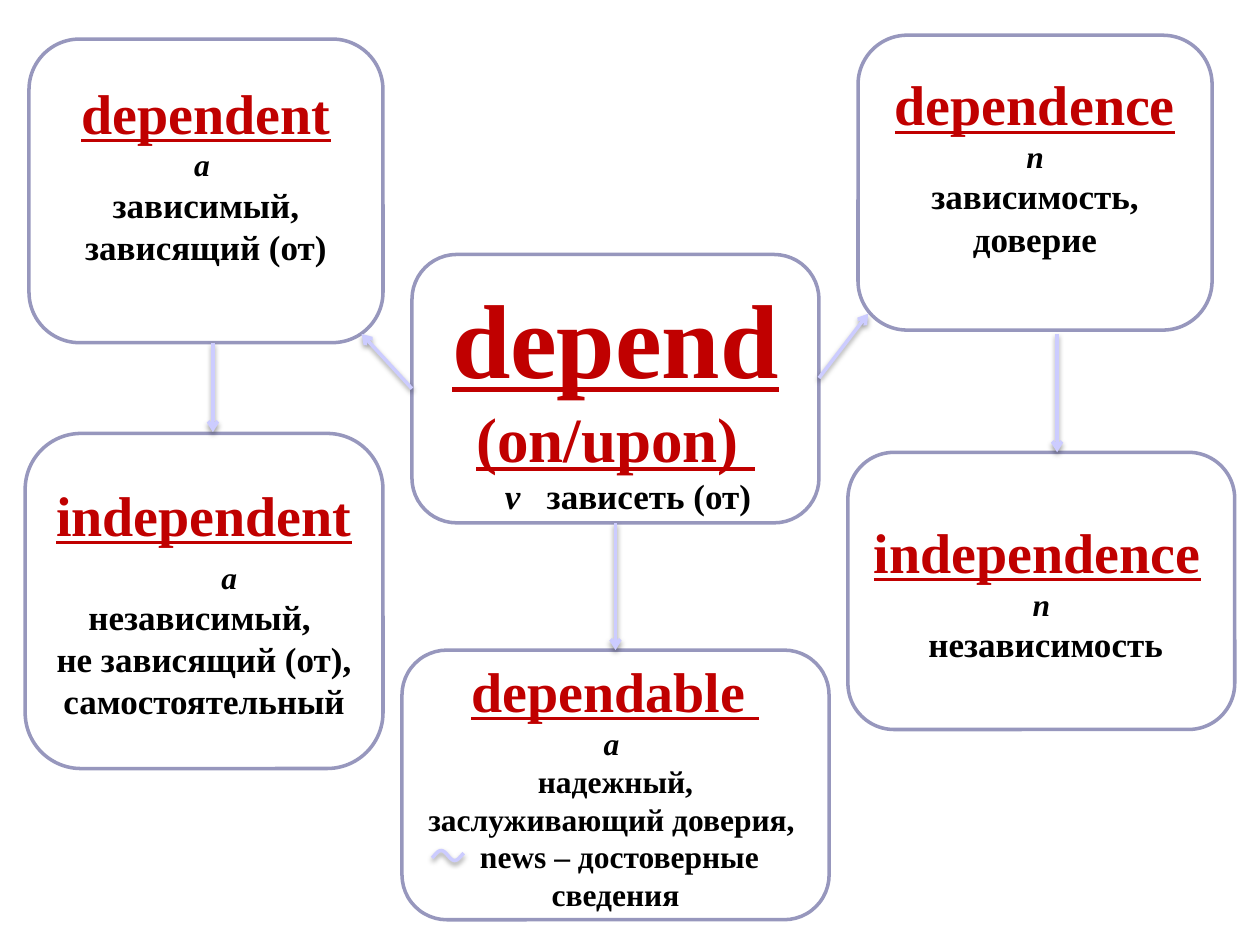
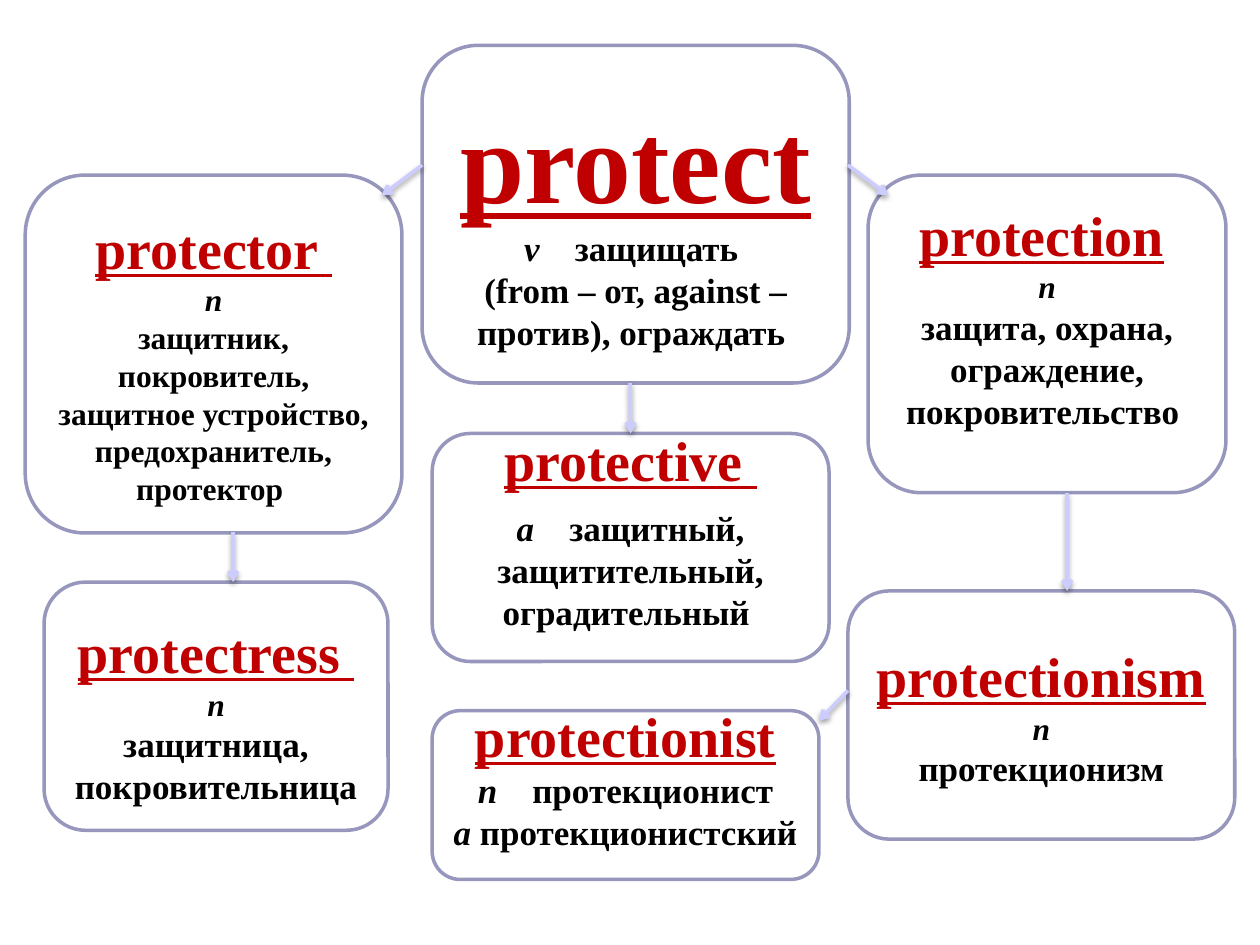
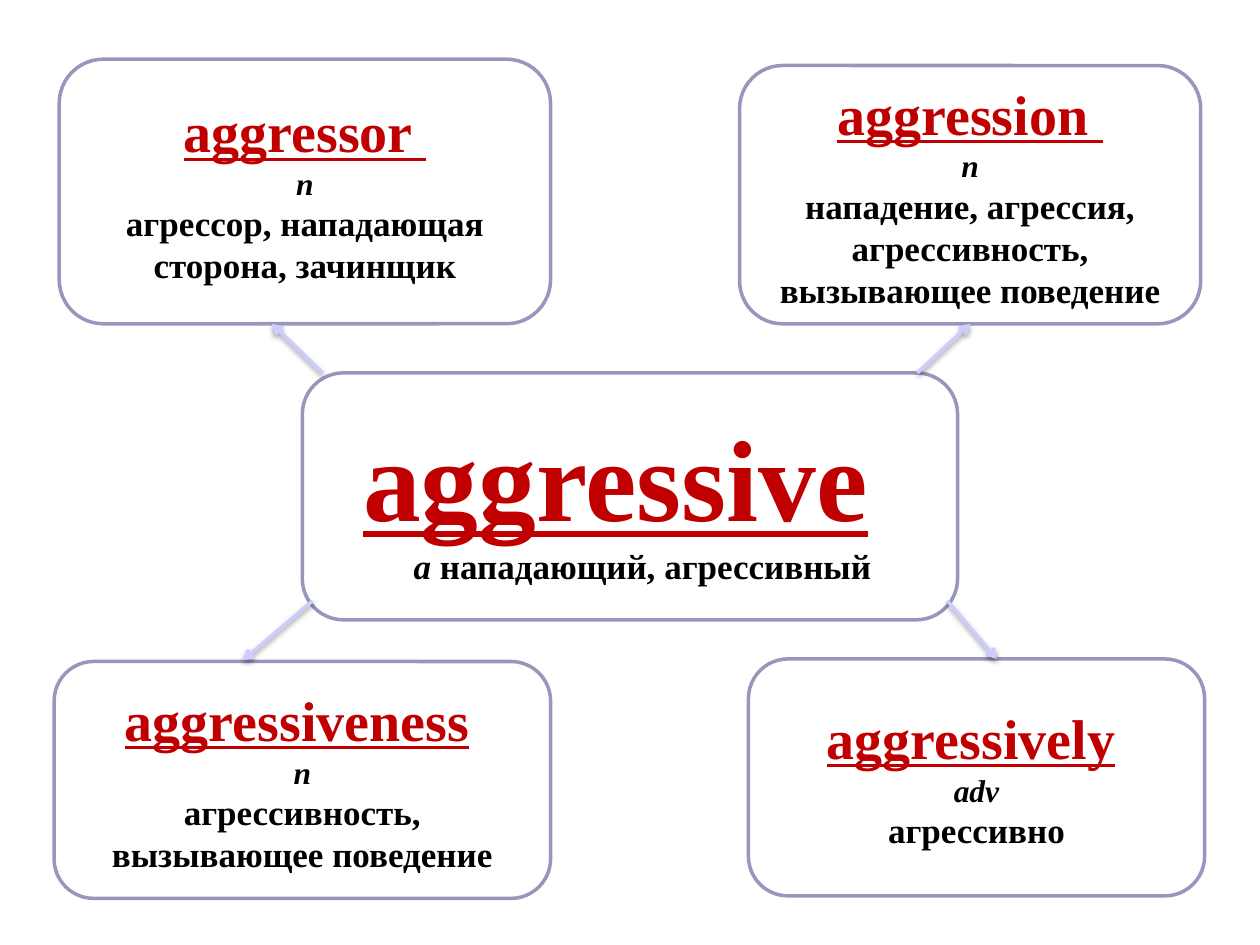
from dataclasses import dataclass
from math import pi, sin

from lxml import etree
from pptx import Presentation
from pptx.dml.color import RGBColor
from pptx.enum.shapes import MSO_CONNECTOR, MSO_SHAPE
from pptx.enum.text import MSO_ANCHOR, PP_ALIGN
from pptx.oxml.ns import qn
from pptx.util import Inches, Pt

ROUNDED = MSO_SHAPE.ROUNDED_RECTANGLE
STRAIGHT = MSO_CONNECTOR.STRAIGHT
MIDDLE = MSO_ANCHOR.MIDDLE
CENTER = PP_ALIGN.CENTER
TOP, LEFT, BOTTOM = 0, 1, 2
BLANK_LAYOUT = 6

# The slide is a grid of 100 columns by 75 rows
COLUMNS, ROWS = 100, 75
CELL = Inches(0.1)


@dataclass(frozen=True)
class Theme:
    font: str = "Times New Roman"
    paper: RGBColor = RGBColor(0xFF, 0xFF, 0xFF)
    ink: RGBColor = RGBColor(0, 0, 0)
    word: RGBColor = RGBColor(0xC0, 0, 0)
    border: RGBColor = RGBColor(0x97, 0x97, 0xBD)
    arrow: RGBColor = RGBColor(0xCC, 0xCC, 0xFF)
    line: float = 2
    root: int = 66
    head: int = 32
    text: int = 20
    small: int = 18
    inset: float = 3.6
    top_pad: float = 27.6
    bottom_pad: float = 20.7


THEME = Theme()


def grid(cells):
    return int(cells * CELL)


# Spans and paragraphs of a word card
def span(text, size=THEME.text, color=THEME.ink, spread=0, **style):
    return {"text": text, "color": color, "spread": spread,
            "font": {"name": THEME.font, "size": Pt(size), "bold": True, **style}}


def line(*spans, **layout):
    return {"spans": spans, "layout": {"alignment": CENTER, **layout}}


def head(text, size=THEME.head, tail=0):
    """Underlined word; tail is the size of a plain space after it."""
    spans = [span(text, size, THEME.word, underline=True)]
    if tail:
        spans.append(span(" ", tail))
    return line(*spans)


def part(text, **layout):
    return line(span(text, THEME.small, italic=True), **layout)


def meaning(text, size=THEME.text):
    return line(span(text, size))


def part_and_meaning(label, text, spread=0, **layout):
    return line(span(label, italic=True), span(" ", spread=spread), span(text), **layout)


def indent(para, width):
    para._p.get_or_add_pPr().set("marL", str(width))


def write(frame, lines):
    for index, content in enumerate(lines):
        para = frame.paragraphs[0] if index == 0 else frame.add_paragraph()
        for name, value in content["layout"].items():
            if name == "indent":
                indent(para, value)
            else:
                setattr(para, name, value)
        for piece in content["spans"]:
            run = para.add_run()
            run.text = piece["text"]
            for name, value in piece["font"].items():
                setattr(run.font, name, value)
            run.font.color.rgb = piece["color"]
            if piece["spread"]:
                run._r.get_or_add_rPr().set("spc", str(piece["spread"] * 100))


def draw_card(slide, place, lines, above=0, below=0):
    """Rounded card; above and below are extra insets in points."""
    card = slide.shapes.add_shape(ROUNDED, *map(grid, place))
    card.shadow.inherit = False
    card.fill.solid()
    card.fill.fore_color.rgb = THEME.paper
    card.line.color.rgb = THEME.border
    card.line.width = Pt(THEME.line)
    frame = card.text_frame
    settings = {"word_wrap": True, "vertical_anchor": MIDDLE,
                "margin_top": Pt(THEME.inset + above),
                "margin_bottom": Pt(THEME.inset + below)}
    for name, value in settings.items():
        setattr(frame, name, value)
    write(frame, lines)
    return card


# Strokes: arrows and the tilde
def style_stroke(stroke):
    stroke.line.color.rgb = THEME.arrow
    stroke.line.width = Pt(THEME.line)
    properties = stroke._element.spPr
    effects = etree.SubElement(properties, qn("a:effectLst"))
    shadow = etree.SubElement(effects, qn("a:outerShdw"), blurRad=str(Pt(3.1)),
                              dist=str(Pt(1.6)), dir="5400000", rotWithShape="0")
    color = etree.SubElement(shadow, qn("a:srgbClr"), val="000000")
    etree.SubElement(color, qn("a:alpha"), val="38000")


def draw_arrow(slide, start, end, begin=None, finish=None):
    """Arrow; begin and finish are (card, side) pairs to join."""
    arrow = slide.shapes.add_connector(STRAIGHT, *map(grid, (*start, *end)))
    if begin:
        arrow.begin_connect(*begin)
    if finish:
        arrow.end_connect(*finish)
    style_stroke(arrow)
    etree.SubElement(arrow.line._get_or_add_ln(), qn("a:tailEnd"), type="arrow")


def draw_tilde(slide, left, middle, width, height, steps=24):
    points = []
    for step in range(steps + 1):
        share = step / steps
        wave = sin(share * (2 * pi + 1) - 0.5)
        points.append((grid(left + width * share), grid(middle - height / 2 * wave)))
    builder = slide.shapes.build_freeform(*points[0])
    builder.add_line_segments(points[1:], close=False)
    tilde = builder.convert_to_shape()
    tilde.fill.background()
    style_stroke(tilde)


def depend_slide(slide):
    root = draw_card(slide, (32.7, 20.2, 32.3, 21.3), [
        head("depend", 60), head("(on/upon) ", 36),
        part_and_meaning("v", "зависеть (от)", 10, indent=Inches(0.2))], above=7)
    draw_card(slide, (2.3, 3.1, 28.1, 24.1), [
        head("dependent"), part("a "), meaning("зависимый, зависящий (от)")],
        below=THEME.bottom_pad)
    draw_card(slide, (68.1, 2.8, 28.1, 23.4), [
        head("dependence"), part("n"), meaning("зависимость, доверие")],
        below=THEME.bottom_pad)
    draw_card(slide, (2, 34.4, 28.4, 26.6), [
        head("independent"), part("a", indent=Inches(0.4), space_before=Pt(6)),
        meaning("независимый, "), meaning("не зависящий (от), самостоятельный")])
    dependable = draw_card(slide, (31.9, 51.6, 33.9, 21.4), [
        head("dependable "), part("a "),
        meaning("надежный, заслуживающий доверия, ", THEME.small),
        meaning(" news – достоверные сведения", THEME.small)])
    draw_card(slide, (67.3, 35.9, 30.7, 22), [
        head("independence", tail=THEME.small), part("n"), meaning(" независимость")])
    draw_arrow(slide, (65, 30), (68.9, 24.9))
    draw_arrow(slide, (83.9, 26.5), (83.9, 35.9))
    draw_arrow(slide, (32.7, 30.8), (28.7, 26.5), begin=(root, LEFT))
    draw_arrow(slide, (16.9, 27.2), (16.9, 34.3))
    draw_arrow(slide, (48.8, 41.4), (48.8, 51.6), (root, BOTTOM), (dependable, TOP))
    draw_tilde(slide, 34.3, 67.9, 2.5, 0.8)


def protect_slide(slide):
    both = {"above": THEME.top_pad, "below": THEME.bottom_pad}
    draw_card(slide, (3.5, 46.2, 27.3, 19.7), [
        head("protectress "), part("n"), meaning("защитница, покровительница")], **both)
    draw_card(slide, (67.3, 46.9, 30.7, 19.7), [
        head("protectionism"), part("n"), meaning("протекционизм")])
    draw_card(slide, (68.9, 13.9, 28.4, 25.2), [
        head("protection", tail=24), part("n"),
        meaning("защита, охрана, ограждение, покровительство ")],
        below=THEME.bottom_pad)
    draw_card(slide, (33.5, 3.6, 33.9, 26.8), [
        head("protect", THEME.root), part_and_meaning("v", "защищать ", 15),
        meaning("(from – от, against – против), ограждать ")], **both)
    protective = draw_card(slide, (34.3, 34.4, 31.5, 18.1), [
        head("protective "),
        part_and_meaning("a", "защитный, защитительный, оградительный ", 15,
                         space_before=Pt(8))], below=THEME.bottom_pad)
    draw_card(slide, (34.3, 56.4, 30.7, 13.4), [
        head("protectionist"), part_and_meaning("n", "протекционист", 15),
        part_and_meaning("a", "протекционистский")], below=THEME.bottom_pad)
    duties = ("защитник, покровитель, защитное устройство,", "предохранитель,",
              "протектор ")
    draw_card(slide, (2, 13.9, 29.9, 28.4), [
        head("protector "), part("n"),
        *(meaning(duty, THEME.small) for duty in duties)], **both)
    draw_arrow(slide, (33.5, 13.1), (30.3, 15.5))
    draw_arrow(slide, (18.5, 42.2), (18.5, 46.2))
    draw_arrow(slide, (50, 30.4), (50, 34.4), finish=(protective, TOP))
    draw_arrow(slide, (67.3, 13.1), (70.5, 15.5))
    draw_arrow(slide, (84.7, 39.1), (84.7, 46.9))
    draw_arrow(slide, (67.3, 54.8), (65, 57.2))


def aggressive_slide(slide):
    draw_card(slide, (24, 29.6, 52, 19.6), [
        head("aggressive", THEME.root, tail=THEME.root),
        part_and_meaning("a", "нападающий, агрессивный", indent=Inches(0.2))])
    draw_card(slide, (59.4, 52.3, 36.2, 18.8), [
        head("aggressively", tail=24), part("adv"), meaning("агрессивно")])
    aggression = draw_card(slide, (58.7, 5.2, 36.6, 20.5), [
        head("aggression "), part("n"),
        meaning("нападение, агрессия, агрессивность, вызывающее поведение")])
    draw_card(slide, (4.7, 4.7, 39, 21), [
        head("aggressor "), part("n"),
        meaning("агрессор, нападающая сторона, зачинщик")])
    draw_card(slide, (4.3, 52.5, 39.4, 18.8), [
        head("aggressiveness", tail=24), part("n"),
        meaning("агрессивность, вызывающее поведение")])
    draw_arrow(slide, (72.8, 29.6), (76.7, 25.7), finish=(aggression, BOTTOM))
    draw_arrow(slide, (75.2, 47.7), (79.1, 52.3))
    draw_arrow(slide, (25.6, 29.6), (21.6, 25.7))
    draw_arrow(slide, (24.8, 47.7), (19.3, 52.4))


def main():
    deck = Presentation()
    deck.slide_width, deck.slide_height = grid(COLUMNS), grid(ROWS)
    for fill_slide in (depend_slide, protect_slide, aggressive_slide):
        fill_slide(deck.slides.add_slide(deck.slide_layouts[BLANK_LAYOUT]))
    deck.save("out.pptx")


if __name__ == "__main__":
    main()
